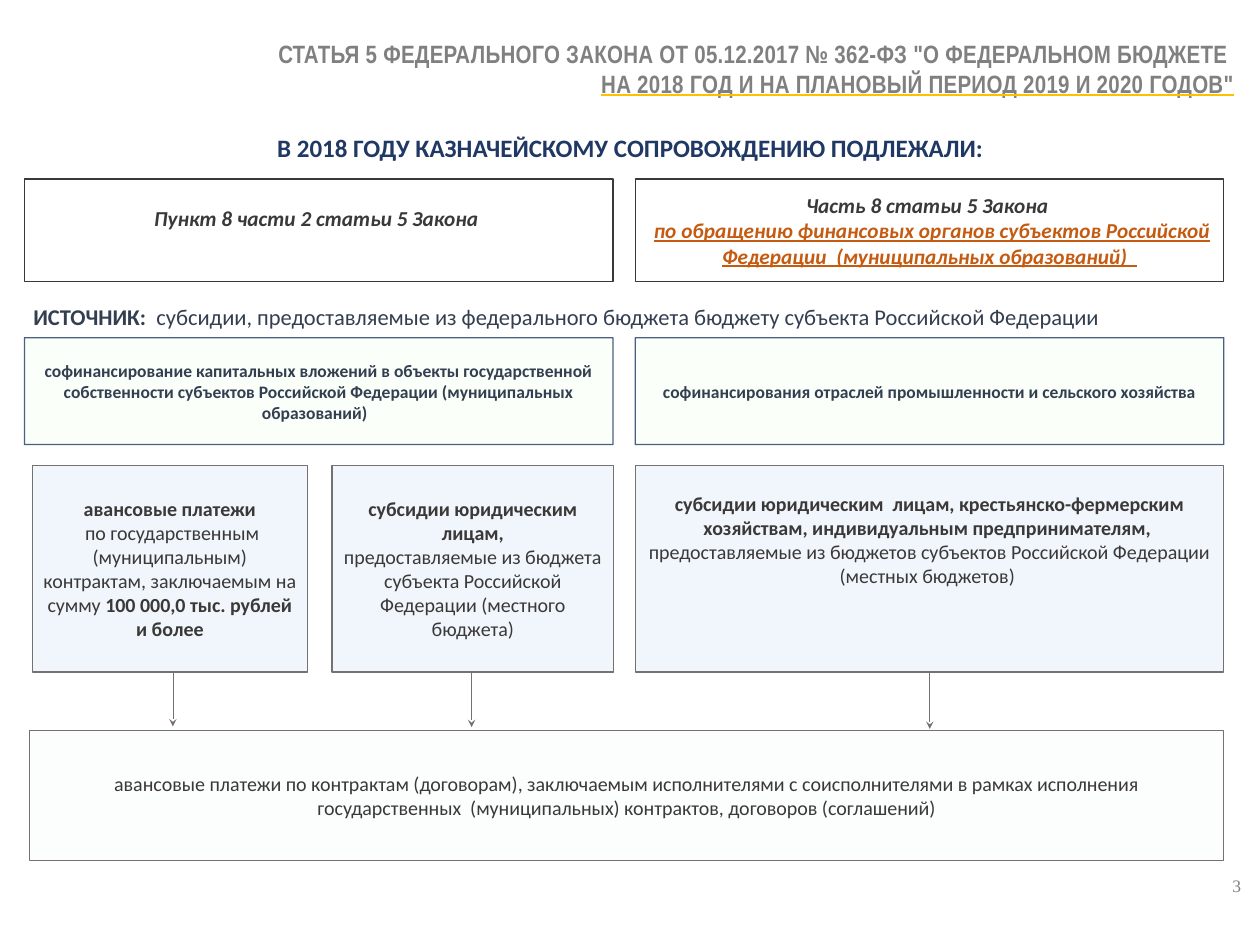
from dataclasses import dataclass

from lxml import etree
from pptx import Presentation
from pptx.dml import color
from pptx.enum import shapes, text
from pptx.oxml import ns
from pptx.util import Cm, Pt


@dataclass(frozen=True)
class Theme:
    body: str = "Calibri"
    heading: str = "Arial Narrow"
    number: str = "Times New Roman"
    grey: str = "808080"
    dark: str = "3B3838"
    navy: str = "203864"
    slate: str = "333F50"
    orange: str = "C55A11"
    border: str = "767171"
    gold: str = "FFC000"
    white: str = "FFFFFF"
    mint: str = "EFFFEF"
    sky: str = "DEEBF7"
    mist: str = "D6DCE5"
    title_size: int = 20
    source_size: int = 18
    law_size: int = 17
    detail_size: int = 16
    small_size: int = 14


THEME = Theme()
SIDE, EDGE = 0.3, 0.15  # text insets, cm

# Two-column grid and row tops, cm
LEFT, COLUMN, GAP = 0.69, 16.61, 0.63
RIGHT = LEFT + COLUMN + GAP
LAW_TOP, PURPOSE_TOP, RECIPIENT_TOP, RESULT_TOP = 5.05, 9.53, 13.13, 20.62
LAW_HEIGHT, PURPOSE_HEIGHT, RECIPIENT_HEIGHT = 2.9, 3.02, 5.84

LAW_FONT = dict(size=THEME.law_size, color=THEME.dark, bold=True, italic=True)
PURPOSE_FONT = dict(size=THEME.small_size, color=THEME.slate, bold=True)
DETAIL_FONT = dict(size=THEME.detail_size, color=THEME.dark)
BOLD = dict(bold=True)

LAW_BOX = dict(fill=(THEME.white, 92), line=(THEME.dark, 100))
PURPOSE_BOX = dict(fill=(THEME.mint, 30), line=(THEME.navy, 80))
RECIPIENT_BOX = dict(fill=(THEME.sky, 44), line=(THEME.border, 100))
RESULT_BOX = dict(fill=(THEME.mist, 5), line=(THEME.border, 100))


def place(shape, area):
    for side, value in zip(("left", "top", "width", "height"), area):
        setattr(shape, side, Cm(value))


def paint(fill, tint, opacity):
    """Solid fill with an opacity in percent."""
    fill.solid()
    fill.fore_color.rgb = color.RGBColor.from_string(tint)
    if opacity < 100:
        for tag in fill._xPr.iter(ns.qn("a:srgbClr")):
            etree.SubElement(tag, ns.qn("a:alpha"), val=str(opacity * 1000))


def style_run(run, style):
    style = {"name": THEME.body, **style}
    run.font.color.rgb = color.RGBColor.from_string(style.pop("color"))
    style["size"] = Pt(style["size"])
    for key, value in style.items():
        setattr(run.font, key, value)


def write(shape, paragraphs, base, align="CENTER", anchor="MIDDLE",
          wrap=True, top=EDGE, bottom=EDGE, side=SIDE):
    """Each paragraph is a list of (words, differences from the base font)."""
    frame = shape.text_frame
    layout = dict(word_wrap=wrap, auto_size=text.MSO_AUTO_SIZE.NONE,
                  vertical_anchor=text.MSO_ANCHOR[anchor],
                  margin_left=Cm(side), margin_right=Cm(side),
                  margin_top=Cm(top), margin_bottom=Cm(bottom))
    for key, value in layout.items():
        setattr(frame, key, value)
    for index, runs in enumerate(paragraphs):
        paragraph = frame.add_paragraph() if index else frame.paragraphs[0]
        paragraph.alignment = text.PP_ALIGN[align]
        for words, changes in runs:
            run = paragraph.add_run()
            run.text = words
            style_run(run, {**base, **changes})


def add_box(slide, area, look, paragraphs, base, **layout):
    box = slide.shapes.add_shape(shapes.MSO_SHAPE.RECTANGLE, *map(Cm, area))
    box.shadow.inherit = False
    paint(box.fill, *look["fill"])
    paint(box.line.fill, *look["line"])
    box.line.width = Pt(1)
    write(box, paragraphs, base, **layout)


def add_label(slide, area, paragraphs, base, **layout):
    label = slide.shapes.add_textbox(*map(Cm, area))
    write(label, paragraphs, base, **layout)


def add_arrow(slide, x, end):
    start = RECIPIENT_TOP + RECIPIENT_HEIGHT
    arrow = slide.shapes.add_connector(
        shapes.MSO_CONNECTOR.STRAIGHT, Cm(x), Cm(start), Cm(x), Cm(end))
    arrow.line.color.rgb = color.RGBColor.from_string(THEME.border)
    arrow.line.width = Pt(0.5)
    etree.SubElement(arrow.line._get_or_add_ln(), ns.qn("a:tailEnd"), type="stealth")
    etree.SubElement(arrow._element.spPr, ns.qn("a:effectLst"))


def add_title(slide):
    title = slide.shapes.title
    place(title, (LEFT, 0.94, 34.44, 2.01))
    write(title, [
        [('СТАТЬЯ 5 ФЕДЕРАЛЬНОГО ЗАКОНА ОТ 05.12.2017 № 362-ФЗ "О ФЕДЕРАЛЬНОМ БЮДЖЕТЕ ', {})],
        [('НА 2018 ГОД И НА ПЛАНОВЫЙ ПЕРИОД 2019 И 2020 ГОДОВ"', dict(underline=True))],
    ], dict(name=THEME.heading, size=THEME.title_size, color=THEME.grey, bold=True),
        align="RIGHT", anchor="TOP")
    for paragraph in title.text_frame.paragraphs:
        for run in paragraph.runs:
            properties = run.font._rPr
            properties.set("spc", "20")
            if run.font.underline:
                # Gold underline stands between the fill and the typeface
                underline = etree.Element(ns.qn("a:uFill"))
                solid = etree.SubElement(underline, ns.qn("a:solidFill"))
                etree.SubElement(solid, ns.qn("a:srgbClr"), val=THEME.gold)
                properties.find(ns.qn("a:solidFill")).addnext(underline)


def main():
    deck = Presentation()
    deck.slide_width, deck.slide_height = Cm(35.56), Cm(26.67)
    slide = deck.slides.add_slide(deck.slide_layouts.get_by_name("Title Only"))

    # Headings and page number
    add_title(slide)
    add_label(slide, (1.24, 3.58, 33.1, 1.17),
              [[("В 2018 ГОДУ КАЗНАЧЕЙСКОМУ СОПРОВОЖДЕНИЮ ПОДЛЕЖАЛИ:", {})]],
              dict(size=THEME.title_size, color=THEME.navy, bold=True), anchor="TOP")
    add_label(slide, (LEFT, 8.43, 30.94, 1.02), [[
        ("ИСТОЧНИК:  ", BOLD),
        ("субсидии, предоставляемые из федерального бюджета бюджету субъекта Российской Федерации", {}),
    ]], dict(size=THEME.source_size, color=THEME.slate),
        align="LEFT", anchor="TOP", wrap=False, side=0.25, top=0.13)
    add_label(slide, (34.16, 24.28, 1.17, 1.42), [[("3", {})]],
              dict(name=THEME.number, size=THEME.small_size, color=THEME.grey), align="RIGHT")

    # Provisions of the law
    add_box(slide, (LEFT, LAW_TOP, COLUMN, LAW_HEIGHT), LAW_BOX,
            [[("Пункт 8 части 2 статьи 5 Закона ", {})]], LAW_FONT, bottom=0.87)
    add_box(slide, (RIGHT, LAW_TOP, COLUMN, LAW_HEIGHT), LAW_BOX, [
        [("Часть 8 статьи 5 Закона ", {})],
        [(" ", {}),
         ("по обращению финансовых органов субъектов Российской Федерации  (муниципальных образований)  ",
          dict(color=THEME.orange, underline=True))],
    ], LAW_FONT)

    # Purposes of the subsidies
    purposes = (
        "софинансирование капитальных вложений в объекты государственной собственности "
        "субъектов Российской Федерации (муниципальных образований)  ",
        "софинансирования отраслей промышленности и сельского хозяйства",
    )
    for x, purpose in zip((LEFT, RIGHT), purposes):
        add_box(slide, (x, PURPOSE_TOP, COLUMN, PURPOSE_HEIGHT), PURPOSE_BOX,
                [[(purpose, {})]], PURPOSE_FONT)

    # Payments and recipients, each with an arrow: left, width, arrow x, arrow end
    recipients = (
        (0.91, 7.77, 4.88, 20.5, {}, [
            [("авансовые платежи", BOLD)],
            [(" по государственным (муниципальным) контрактам, заключаемым на сумму ", {}),
             ("100 000,0 тыс. рублей и более", BOLD)]]),
        (9.37, 7.95, 13.31, 20.52, {}, [
            [("субсидии юридическим лицам,", BOLD)],
            [("предоставляемые из бюджета субъекта Российской Федерации (местного бюджета)", {})]]),
        (RIGHT, COLUMN, 26.24, 20.57, dict(anchor="TOP", top=0.75), [
            [("субсидии юридическим  лицам, крестьянско-фермерским хозяйствам, "
              "индивидуальным предпринимателям,  ", BOLD),
             ("предоставляемые из бюджетов субъектов Российской Федерации (местных бюджетов) ", {})]]),
    )
    for x, width, arrow_x, arrow_end, layout, paragraphs in recipients:
        add_box(slide, (x, RECIPIENT_TOP, width, RECIPIENT_HEIGHT), RECIPIENT_BOX,
                paragraphs, DETAIL_FONT, **layout)
        add_arrow(slide, arrow_x, arrow_end)

    # Payments to co-contractors
    add_box(slide, (0.84, RESULT_TOP, 33.7, 3.66), RESULT_BOX, [[
        ("авансовые платежи по контрактам (договорам), заключаемым исполнителями с соисполнителями "
         "в рамках исполнения государственных  (муниципальных) контрактов, договоров (соглашений)", {}),
    ]], DETAIL_FONT)

    deck.save("out.pptx")


if __name__ == "__main__":
    main()
